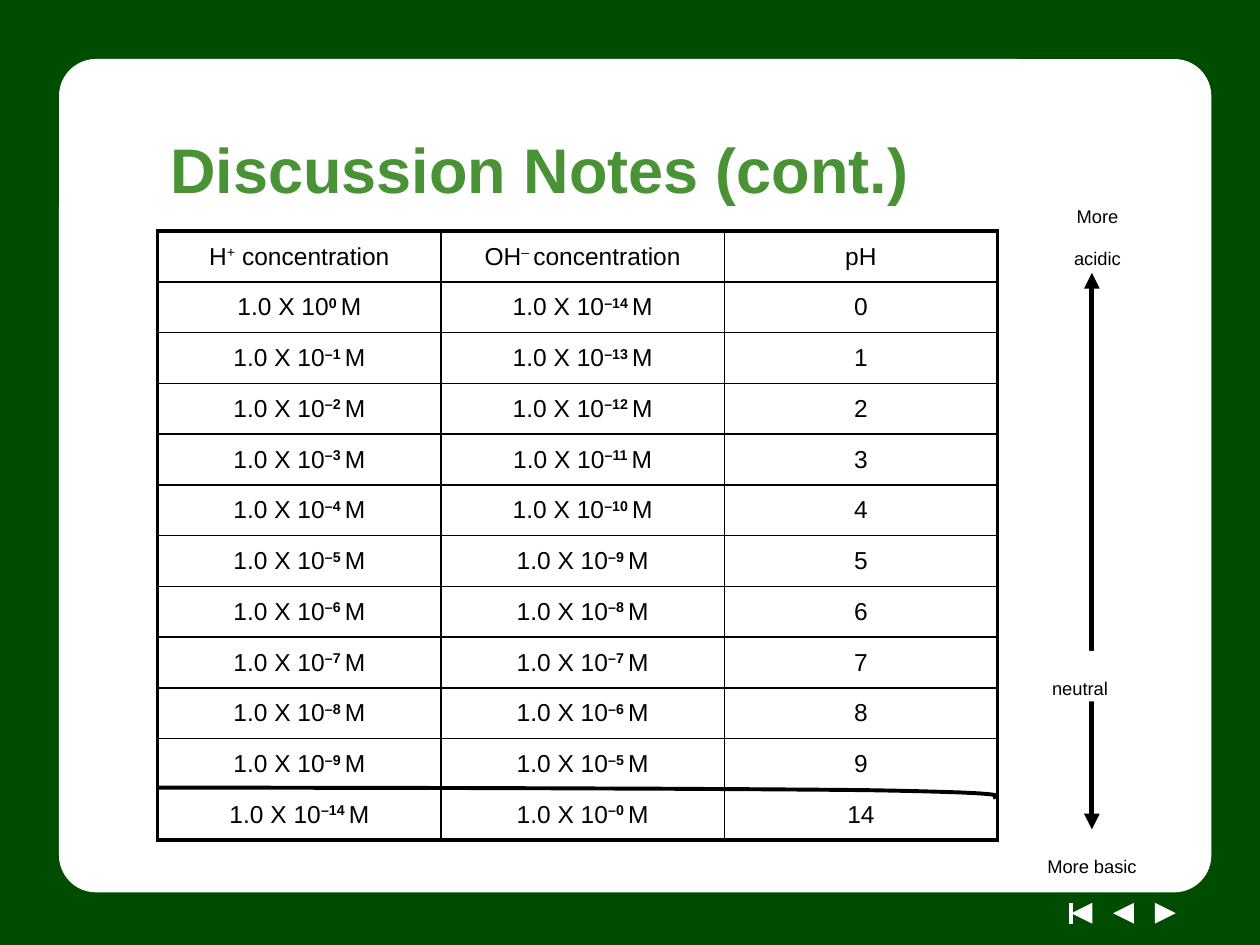
from pptx import Presentation
from pptx.dml.color import RGBColor
from pptx.enum.shapes import MSO_CONNECTOR, MSO_SHAPE
from pptx.enum.text import MSO_ANCHOR, PP_ALIGN
from pptx.oxml.ns import qn
from pptx.util import Cm, Pt
from lxml import etree

RECTANGLE = MSO_SHAPE.RECTANGLE
ROUNDED = MSO_SHAPE.ROUNDED_RECTANGLE
TRIANGLE = MSO_SHAPE.ISOSCELES_TRIANGLE
STRAIGHT = MSO_CONNECTOR.STRAIGHT
LEFT, CENTER = PP_ALIGN.LEFT, PP_ALIGN.CENTER
MIDDLE = MSO_ANCHOR.MIDDLE

FONT = "Arial"
COLORS = {
    "frame": "004C01",
    "title": "499235",
    "ink": "000000",
    "paper": "FFFFFF",
}
RGB = {name: RGBColor.from_string(value) for name, value in COLORS.items()}

deck = Presentation()
deck.slide_width, deck.slide_height = Cm(25.4), Cm(19.05)
page = deck.slides.add_slide(deck.slide_layouts[5])


def add_filled(kind, left, top, width, height, color):
    shape = page.shapes.add_shape(kind, Cm(left), Cm(top), Cm(width), Cm(height))
    shape.shadow.inherit = False
    shape.fill.solid()
    shape.fill.fore_color.rgb = RGB[color]
    shape.line.fill.background()
    return shape


def add_line(x1, y1, x2, y2, color, width):
    line = page.shapes.add_connector(STRAIGHT, Cm(x1), Cm(y1), Cm(x2), Cm(y2))
    line.line.color.rgb = RGB[color]
    line.line.width = Pt(width)
    etree.SubElement(line._element.spPr, qn("a:effectLst"))
    return line


# Green frame with navigation marks and the white panel
add_filled(RECTANGLE, 0, 0, 25.4, 19.05, "frame")
for left, turn in ((23.28, 90), (22.44, 270), (21.6, 270)):
    add_filled(TRIANGLE, left, 18.2, 0.42, 0.42, "paper").rotation = turn
add_line(21.59, 18.2, 21.59, 18.62, "paper", 2)
panel = add_filled(ROUNDED, 1.27, 1.27, 23.07, 16.64, "paper")
panel.adjustments[0] = 0.04
panel.line.color.rgb = RGB["paper"]
panel.line.width = Pt(4.5)

# Title, brought in front of the panel
title = page.shapes.title
title.left, title.top, title.width, title.height = Cm(3.18), Cm(1.91), Cm(20.96), Cm(2.96)
title.text_frame.text = "Discussion Notes (cont.)"
title.text_frame.vertical_anchor = MIDDLE
title.text_frame.paragraphs[0].alignment = LEFT
font = title.text_frame.paragraphs[0].runs[0].font
font.name, font.size, font.bold = FONT, Pt(36), True
font.color.rgb = RGB["title"]
page.shapes._spTree.append(title._element)

# Table content: each cell is a list of (text, raised, bold)
rows = [[
    [("H", False, False), ("+", True, False), (" concentration", False, False)],
    [("OH", False, False), ("– ", True, False), ("concentration", False, False)],
    [("pH", False, False)],
]]
for ph in [*range(10), 14]:
    exponents = (f"–{ph} " if ph else "0 ", f"–{14 - ph} ")
    rows.append([
        [("1.0 X 10", False, False), (exponent, True, True), ("M", False, False)]
        for exponent in exponents
    ] + [[(str(ph), False, False)]])

# Table with a heavy outline; the curve replaces the rule above the last row
last_row, last_column = len(rows) - 1, 2
frame = page.shapes.add_table(len(rows), 3, Cm(3.18), Cm(4.66), Cm(16.93), Cm(12.28))
table = frame.table
table.first_row = table.horz_banding = False
for column, width in zip(table.columns, (5.71, 5.71, 5.51)):
    column.width = Cm(width)
for r, row in enumerate(rows):
    table.rows[r].height = Cm(12.28 / len(rows))
    for c, spans in enumerate(row):
        cell = table.cell(r, c)
        cell.fill.background()
        cell.vertical_anchor = MIDDLE
        para = cell.text_frame.paragraphs[0]
        para.alignment = CENTER
        for text, raised, bold in spans:
            span = para.add_run()
            span.text = text
            span.font.name, span.font.size, span.font.bold = FONT, Pt(14), bold
            span.font.color.rgb = RGB["ink"]
            if raised:
                span._r.get_or_add_rPr().set("baseline", "30000")
        borders = {
            "a:lnL": 2.25 if c == 0 else 1,
            "a:lnR": 2.25 if c == last_column else 1,
            "a:lnT": 2.25 if r == 0 else 0 if r == last_row else 1,
            "a:lnB": 2.25 if r == last_row else 0 if r == last_row - 1 else 1,
        }
        properties = cell._tc.get_or_add_tcPr()
        for place, (tag, width) in enumerate(borders.items()):
            edge = etree.Element(qn(tag), w=str(Pt(width)))
            if width:
                fill = etree.SubElement(edge, qn("a:solidFill"))
                etree.SubElement(fill, qn("a:srgbClr"), val=COLORS["ink"])
            else:
                etree.SubElement(edge, qn("a:noFill"))
            properties.insert(place, edge)

# Acidity scale: double arrow
arrow = add_line(22.01, 5.5, 22.01, 16.72, "ink", 3)
stroke = arrow.line._get_or_add_ln()
for tag in ("a:headEnd", "a:tailEnd"):
    etree.SubElement(stroke, qn(tag), type="triangle")

# Scale labels; the neutral one interrupts the arrow
labels = [
    ("More acidic", 20.96, 3.6, 2.33, 1.78, CENTER),
    ("More basic", 20.11, 16.72, 3.81, 1.02, CENTER),
    ("neutral", 20.96, 13.12, 2.54, 1.02, LEFT),
]
for text, left, top, width, height, alignment in labels:
    if text == "neutral":
        box = add_filled(RECTANGLE, left, top, width, height, "paper")
    else:
        box = page.shapes.add_textbox(Cm(left), Cm(top), Cm(width), Cm(height))
    box.text_frame.word_wrap = True
    box.text_frame.vertical_anchor = MSO_ANCHOR.TOP
    box.text_frame.text = text
    para = box.text_frame.paragraphs[0]
    para.alignment = alignment
    para.line_spacing = Pt(24)
    font = para.runs[0].font
    font.name, font.size = FONT, Pt(10.5)
    font.color.rgb = RGB["ink"]

# Hand-drawn break above the last row, sampled from two cubic curves
curves = [
    ((3.18, 15.88), (8.94, 15.88), (14.71, 15.9), (17.5, 15.93)),
    ((17.5, 15.93), (20.32, 15.98), (20.17, 16.03), (20.02, 16.08)),
]
steps = 16
points = []
for curve in curves:
    for step in range(1, steps + 1):
        t = step / steps
        weights = ((1 - t) ** 3, 3 * t * (1 - t) ** 2, 3 * t * t * (1 - t), t ** 3)
        points.append(tuple(
            Cm(sum(weight * point[axis] for weight, point in zip(weights, curve)))
            for axis in (0, 1)
        ))
builder = page.shapes.build_freeform(Cm(3.18), Cm(15.88))
builder.add_line_segments(points, close=False)
break_mark = builder.convert_to_shape()
break_mark.shadow.inherit = False
break_mark.fill.background()
break_mark.line.color.rgb = RGB["ink"]
break_mark.line.width = Pt(2.25)

deck.save("out.pptx")
